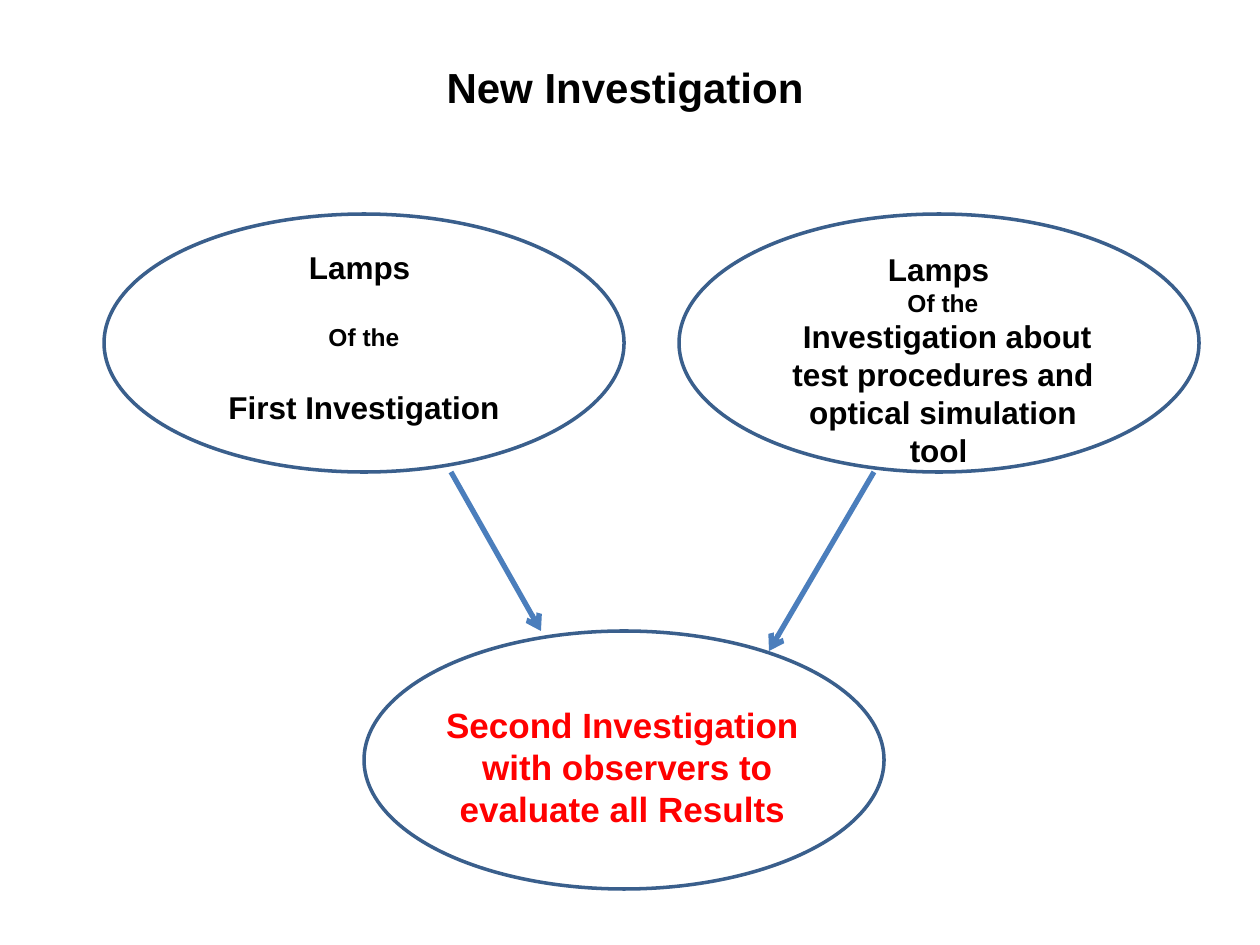
from dataclasses import dataclass

from lxml import etree
from pptx import Presentation
from pptx.dml.color import RGBColor
from pptx.enum.shapes import MSO_CONNECTOR, MSO_SHAPE
from pptx.enum.text import MSO_AUTO_SIZE, PP_ALIGN
from pptx.oxml.ns import qn
from pptx.util import Emu, Pt

ELLIPSE = MSO_SHAPE.OVAL
STRAIGHT = MSO_CONNECTOR.STRAIGHT
CENTER = PP_ALIGN.CENTER
GROW = MSO_AUTO_SIZE.SHAPE_TO_FIT_TEXT
EMU_PER_PX = 914400 / 126


@dataclass(frozen=True)
class Theme:
    font: str = "Arial"
    ink: str = "000000"
    accent: str = "FF0000"
    outline: str = "3A5F8C"
    arrow: str = "4B7EBC"
    title: int = 24
    result: int = 20
    body: int = 18
    small: int = 14
    outline_width: int = 2
    arrow_width: int = 3
    gap: float = 20.7


def px(*values):
    return [Emu(round(v * EMU_PER_PX)) for v in values]


class SlideBuilder:
    def __init__(self, slide, theme):
        self.shapes = slide.shapes
        self.theme = theme

    def stroke(self, sp, color, width):
        sp.line.color.rgb = RGBColor.from_string(color)
        sp.line.width = Pt(width)

    def ellipse(self, left, top, width, height):
        sp = self.shapes.add_shape(ELLIPSE, *px(left, top, width, height))
        sp.shadow.inherit = False
        sp.fill.background()
        self.stroke(sp, self.theme.outline, self.theme.outline_width)

    def arrow(self, x1, y1, x2, y2):
        sp = self.shapes.add_connector(STRAIGHT, *px(x1, y1, x2, y2))
        self.stroke(sp, self.theme.arrow, self.theme.arrow_width)
        ln = sp.line._get_or_add_ln()
        etree.SubElement(ln, qn("a:tailEnd"), type="arrow")
        etree.SubElement(sp._element.spPr, qn("a:effectLst"))

    def text(self, box, lines, color, gap=0):
        sp = self.shapes.add_textbox(*px(*box))
        tf = sp.text_frame
        tf.word_wrap = True
        tf.auto_size = GROW
        for i, (words, size) in enumerate(lines):
            p = tf.add_paragraph() if i else tf.paragraphs[0]
            p.alignment = CENTER
            p.space_before = Pt(gap if i else 0)
            r = p.add_run()
            r.text = words
            style = {"name": self.theme.font, "size": Pt(size), "bold": True}
            for key, value in style.items():
                setattr(r.font, key, value)
            r.font.color.rgb = RGBColor.from_string(color)


def main():
    prs = Presentation()
    prs.slide_width, prs.slide_height = px(1260, 945)
    t = Theme()
    s = SlideBuilder(prs.slides.add_slide(prs.slide_layouts[6]), t)

    s.text((243, 55, 764, 64), [("New Investigation", t.title)], t.ink)

    for left, top in ((104, 214), (679, 214), (364, 631)):
        s.ellipse(left, top, 520, 258)

    s.arrow(451, 472, 541, 631)
    s.arrow(874, 472, 769, 651)

    lamps = [("Lamps ", t.body), ("Of the", t.small)]
    first = ("First Investigation", t.body)
    procedures = (
        " Investigation about test procedures and optical simulation tool ",
        t.body,
    )
    s.text((190, 242, 348, 195), lamps + [first], t.ink, t.gap)
    s.text((769, 244, 348, 233), lamps + [procedures], t.ink)
    second = [
        ("Second Investigation", t.result),
        (" with observers to evaluate all Results", t.result),
    ]
    s.text((422, 697, 401, 140), second, t.accent)

    prs.save("out.pptx")


if __name__ == "__main__":
    main()
